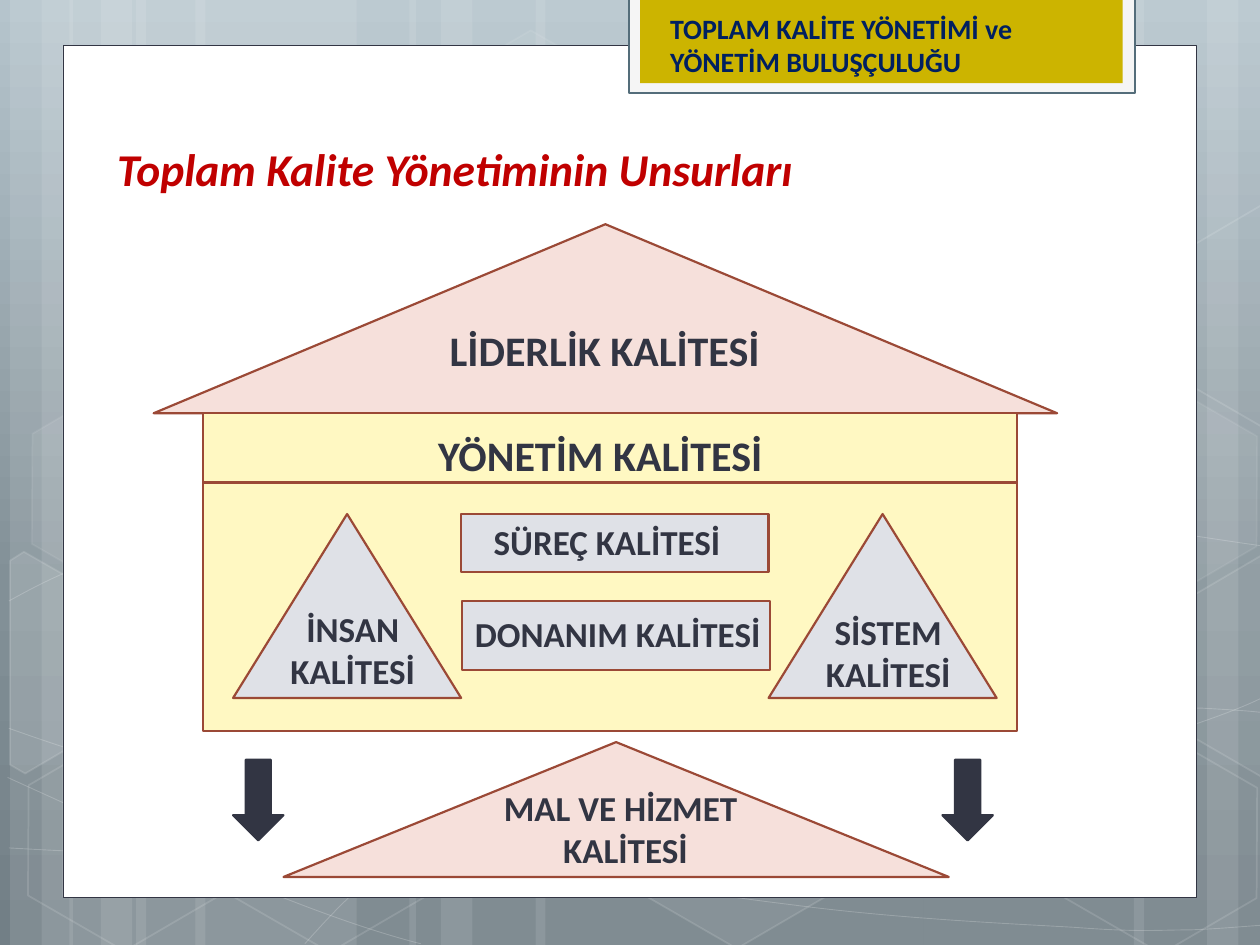
"""Build the slide on the elements of total quality management, drawn as a house."""
from copy import deepcopy

from lxml.etree import SubElement
from pptx import Presentation
from pptx.dml.color import RGBColor
from pptx.enum.shapes import MSO_SHAPE as SHAPE
from pptx.enum.text import MSO_ANCHOR as ANCHOR, PP_ALIGN as ALIGN
from pptx.oxml.ns import qn
from pptx.util import Emu, Pt

PX = 9144
COLORS = {
    "white": "FFFFFF", "ink": "323543", "navy": "002060", "red": "C00000",
    "roof": "F6E0DB", "wall": "FFF8C2", "block": "DFE1E7", "edge": "9B4936",
    "tab": "F5F5F5", "tab_edge": "546D7A", "gold": "CCB400",
}
BACKDROP = [(0, "B5C4CC"), (0.62, "829097"), (1, "727F86")]


def paint(shape, fill=None, line=None, weight=1.25, fill_alpha=100, line_alpha=100):
    shape.shadow.inherit = False
    for part, color, alpha in ((shape.fill, fill, fill_alpha), (shape.line.fill, line, line_alpha)):
        if color is None:
            part.background()
            continue
        part.solid()
        part.fore_color.rgb = RGBColor.from_string(COLORS[color])
        if alpha < 100:
            properties = shape.element.spPr
            root = properties.find(qn("a:ln")) if alpha is line_alpha and part is not shape.fill else properties
            tint = root.find(qn("a:solidFill"))[0]
            SubElement(tint, qn("a:alpha")).set("val", str(alpha * 1000))
    if line:
        shape.line.width = Pt(weight)


def write(label, text, box, size=20, color="ink", italic=False, aligns=(ALIGN.CENTER,)):
    label.left, label.top, label.width, label.height = (Emu(v * PX) for v in box)
    frame = label.text_frame
    frame.text = text
    frame.word_wrap = True
    frame.vertical_anchor = ANCHOR.TOP
    for number, paragraph in enumerate(frame.paragraphs):
        paragraph.alignment = aligns[number]
        font = paragraph.runs[0].font
        font.name, font.size, font.bold, font.italic = "Calibri", Pt(size), True, italic
        font.color.rgb = RGBColor.from_string(COLORS[color])


deck = Presentation()
deck.slide_width, deck.slide_height = 1000 * PX, 750 * PX
slide = deck.slides.add_slide(deck.slide_layouts[5])
shapes = slide.shapes

backdrop = slide.background.fill
backdrop.gradient()
backdrop.gradient_angle = 270
stop_list = next(slide.element.iter(qn("a:gsLst")))
stop_list.append(deepcopy(stop_list[0]))
for stop, (position, color) in zip(backdrop.gradient_stops, BACKDROP):
    stop.position = position
    stop.color.rgb = RGBColor.from_string(color)

STRIPES = [(108, 175), (8, 50), (33, 83), (155, 175), (55, 50), (80, 83),
           (733, 175), (958, 50), (900, 83), (425, 308), (325, 50), (350, 83)]
for left, width in STRIPES:
    stripe = shapes.add_shape(SHAPE.RECTANGLE, left * PX, 0, width * PX, 750 * PX)
    paint(stripe, "white", fill_alpha=10)

STRAIGHT_END = (953, 562)
CURVES = [
    [(7, 673), (61, 676), (115, 679), (190, 678), (265, 677), (358, 675), (458, 665),
     (558, 655), (700, 636), (792, 617), (883, 598), (977, 568), (1007, 551)],
    [(7, 477), (36, 461), (65, 446), (121, 431), (178, 416), (259, 394), (347, 387),
     (436, 380), (544, 379), (654, 387), (764, 395), (947, 426), (1007, 434)],
    [(6, 617), (127, 672), (247, 727), (334, 749)],
    [(7, 578), (38, 589), (70, 600), (128, 616), (186, 631), (273, 656), (357, 673),
     (440, 690), (545, 708), (628, 718), (711, 729), (800, 733), (853, 736),
     (905, 740), (919, 738), (945, 738), (971, 737), (989, 735), (1007, 734)],
    [(242, 749), (260, 729), (278, 709), (302, 691), (326, 673), (360, 653), (388, 639),
     (416, 625), (433, 619), (470, 609), (506, 599), (573, 585), (608, 578),
     (644, 571), (649, 571), (680, 569), (711, 566), (760, 563), (794, 562),
     (829, 561), (886, 562), (886, 562), STRAIGHT_END,
     (971, 563), (988, 564), (997, 565), (1006, 566), (1003, 565), (1006, 566)],
]
for knots in CURVES:
    pen = shapes.build_freeform(*knots[0], scale=PX)
    pen.add_line_segments(knots[1:], close=False)
    curve = pen.convert_to_shape()
    paint(curve, line="white", weight=0.5, line_alpha=20)
    outline = next(curve.element.iter(qn("a:path")))
    bends = [leg for leg, knot in zip(outline.findall(qn("a:lnTo")), knots[1:]) if knot != STRAIGHT_END]
    for first in range(0, len(bends), 3):
        bend = SubElement(outline, qn("a:cubicBezTo"))
        bends[first].addprevious(bend)
        for leg in bends[first:first + 3]:
            bend.append(leg[0])
            outline.remove(leg)

HEXAGONS = [(334, 36, 4, 8), (497, 589, 6, 12), (11, 591, 0, 12), (14, 312, 7, 8), (174, 592, 0, 12),
            (753, 453, 10, 12), (834, 593, 0, 12), (834, 314, 7, 8)]
for left, top, fill_alpha, line_alpha in HEXAGONS:
    hexagon = shapes.add_shape(SHAPE.HEXAGON, left * PX, top * PX, 175 * PX, 152 * PX)
    hexagon.adjustments[0] = 0.285
    hexagon.rotation = 30
    paint(hexagon, "white" if fill_alpha else None, "white", 1, fill_alpha, line_alpha)

CUT_HEXAGONS = [
    ([(8, 445), (19, 438), (96, 482), (95, 570), (20, 614), (8, 607)], 10),
    ([(926, 485), (1001, 441), (1009, 446), (1009, 613), (1002, 617), (926, 573)], 4),
    ([(926, 207), (1001, 163), (1010, 168), (1009, 335), (1002, 339), (926, 295)], 0),
]
for corners, fill_alpha in CUT_HEXAGONS:
    pen = shapes.build_freeform(*corners[0], scale=PX)
    pen.add_line_segments(corners[1:], close=True)
    paint(pen.convert_to_shape(), "white" if fill_alpha else None, "white", 1, fill_alpha, 12)

RECT, TRIANGLE, ARROW = SHAPE.RECTANGLE, SHAPE.ISOSCELES_TRIANGLE, SHAPE.DOWN_ARROW
PARTS = [
    (RECT, (50, 36, 900, 676), "white", "ink", 0.5),
    (RECT, (499, -2, 402, 76), "tab", "tab_edge", 1.25),
    (RECT, (508, -2, 383, 68), "gold", None, 0),
    (TRIANGLE, (122, 178, 717, 150), "roof", "edge", 1.25),
    (RECT, (161, 328, 646, 55), "wall", "edge", 1.25),
    (RECT, (161, 383, 646, 197), "wall", "edge", 1.25),
    (TRIANGLE, (185, 408, 181, 146), "block", "edge", 1.25),
    (TRIANGLE, (610, 408, 181, 146), "block", "edge", 1.25),
    (RECT, (366, 408, 244, 46), "block", "edge", 1.25),
    (RECT, (367, 477, 244, 55), "block", "edge", 1.25),
    (TRIANGLE, (225, 589, 528, 107), "roof", "edge", 1.25),
    (ARROW, (185, 603, 40, 64), "ink", "ink", 1.25),
    (ARROW, (748, 603, 40, 64), "ink", "ink", 1.25),
]
for kind, box, fill, line, weight in PARTS:
    paint(shapes.add_shape(kind, *(v * PX for v in box)), fill, line, weight)

heading = shapes.title
heading.element.getparent().append(heading.element)
write(heading, "Toplam Kalite Yönetiminin Unsurları", (83, 107, 843, 54),
      size=26, color="red", italic=True, aligns=(ALIGN.LEFT,))

LEFT = {"aligns": (ALIGN.LEFT,)}
LABELS = [
    ("TOPLAM KALİTE YÖNETİMİ ve YÖNETİM BULUŞÇULUĞU", (522, 4, 380, 91),
     {"size": 16, "color": "navy", **LEFT}),
    ("LİDERLİK KALİTESİ", (303, 253, 354, 50), {"size": 24}),
    ("YÖNETİM KALİTESİ", (185, 336, 583, 50), {"size": 24}),
    ("İNSAN KALİTESİ", (217, 477, 126, 77), {}),
    ("SİSTEM KALİTESİ", (642, 480, 126, 77), {}),
    ("SÜREÇ KALİTESİ", (382, 408, 213, 44), LEFT),
    ("DONANIM KALİTESİ", (367, 481, 259, 44), LEFT),
    ("MAL VE HİZMET\nKALİTESİ", (390, 619, 213, 77), {"aligns": (ALIGN.LEFT, ALIGN.CENTER)}),
]
for text, box, style in LABELS:
    write(shapes.add_textbox(0, 0, 0, 0), text, box, **style)

deck.save("out.pptx")
